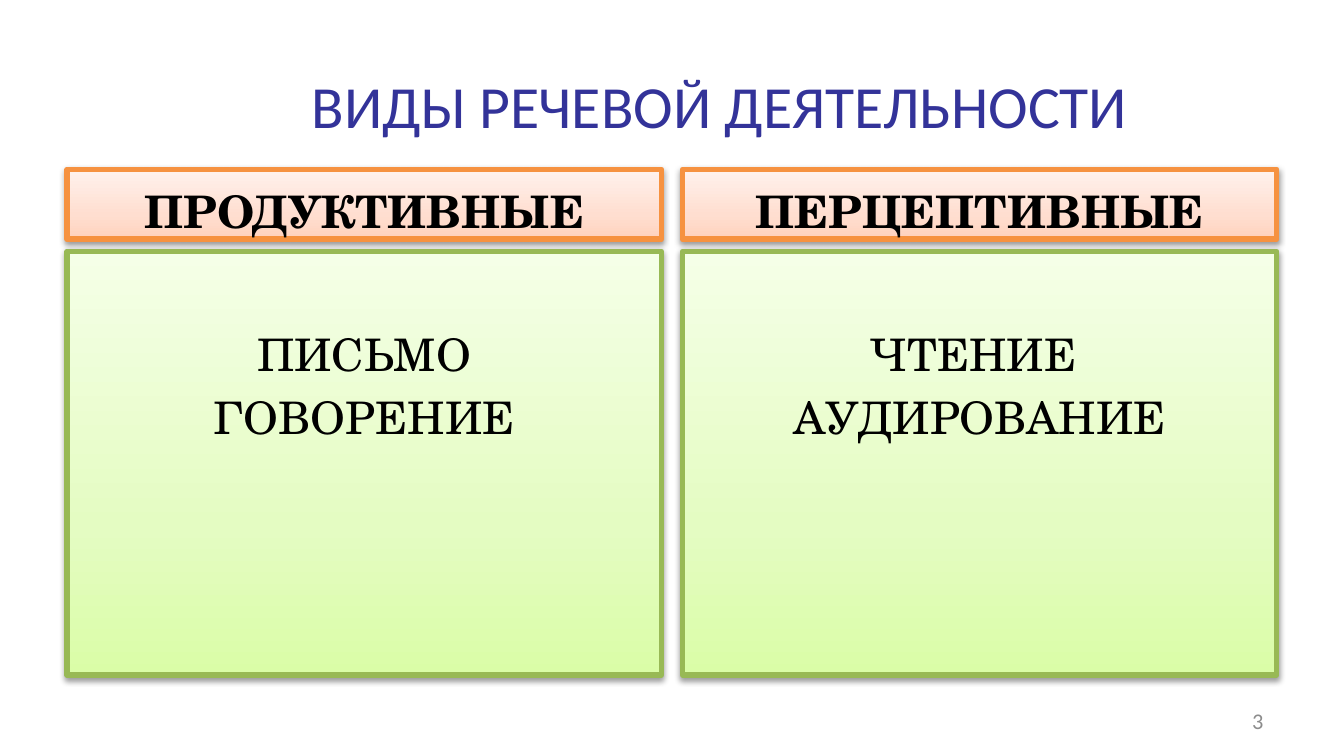
from copy import deepcopy

from lxml.etree import SubElement as Sub
from pptx import Presentation
from pptx.dml.color import RGBColor as RGB
from pptx.enum.shapes import MSO_SHAPE as Kind
from pptx.enum.text import MSO_ANCHOR as Anchor, PP_ALIGN as Align
from pptx.oxml.ns import qn
from pptx.util import Cm, Pt

HEX = {
    "title": "333399", "text": "000000", "number": "8C8C8C",
    "head": "F69240", "body": "98B955", "shade": "000000",
}
BLENDS = {
    "head": ("FFD2BD", "FFDED0", "FFF2ED"),
    "body": ("DAFDA7", "E4FCC2", "F5FFE7"),
}
STOPS = (0, 0.35, 1)
SANS, SERIF = "Calibri", "TeX Gyre Schola"

LEFT, WIDE, STEP = 1.27, 11.23, 11.63
COLUMNS = (
    ("ПРОДУКТИВНЫЕ", ("ПИСЬМО", "ГОВОРЕНИЕ")),
    ("ПЕРЦЕПТИВНЫЕ", ("ЧТЕНИЕ ", "АУДИРОВАНИЕ")),
)


class Deck:
    def __init__(self, wide, high):
        self.show = Presentation()
        self.show.slide_width, self.show.slide_height = Cm(wide), Cm(high)
        self.slide = self.show.slides.add_slide(self.show.slide_layouts[6])

    def letter(self, shape, lines, form, hue, align=Align.CENTER,
               anchor=Anchor.MIDDLE, top=0.13, bottom=0.13):
        """Set each line as a paragraph of the shape."""
        frame = shape.text_frame
        frame.word_wrap = True
        frame.vertical_anchor = anchor
        frame.margin_top, frame.margin_bottom = Cm(top), Cm(bottom)
        for i, line in enumerate(lines):
            para = frame.paragraphs[0] if i == 0 else frame.add_paragraph()
            para.alignment = align
            if i:
                para.space_before = Pt(4.8)
            run = para.add_run()
            run.text = line
            for key, value in form.items():
                setattr(run.font, key, value)
            run.font.color.rgb = RGB.from_string(HEX[hue])

    def label(self, box, line, form, hue, align=Align.CENTER):
        shape = self.slide.shapes.add_textbox(*map(Cm, box))
        self.letter(shape, [line], form, hue, align)

    def panel(self, box, kind, lines, form, **place):
        shape = self.slide.shapes.add_shape(Kind.RECTANGLE, *map(Cm, box))
        self.blend(shape, BLENDS[kind])
        shape.line.color.rgb = RGB.from_string(HEX[kind])
        shape.line.width = Pt(3)
        self.shade(shape)
        self.letter(shape, lines, form, "text", **place)

    def blend(self, shape, hues):
        """Fill with a three-stop gradient that runs from bottom to top."""
        fill = shape.fill
        fill.gradient()
        fill.gradient_angle = 90
        stops = next(shape._element.spPr.iter(qn("a:gsLst")))
        stops.append(deepcopy(stops[-1]))
        for stop, at, hue in zip(fill.gradient_stops, STOPS, hues):
            stop.position = at
            stop.color.rgb = RGB.from_string(hue)

    def shade(self, shape):
        """Drop a soft shadow straight down."""
        shape.shadow.inherit = False
        effects = shape._element.spPr.find(qn("a:effectLst"))
        outer = Sub(effects, qn("a:outerShdw"), blurRad="40000", dist="20000",
                    dir="5400000", rotWithShape="0")
        color = Sub(outer, qn("a:srgbClr"), val=HEX["shade"])
        Sub(color, qn("a:alpha"), val="38000")


def main():
    deck = Deck(25.4, 14.28)
    deck.label((2.18, 0.79, 22.86, 2.39), "ВИДЫ РЕЧЕВОЙ ДЕЯТЕЛЬНОСТИ",
               {"name": SANS, "size": Pt(32)}, "title")
    plain = {"name": SERIF, "size": Pt(24)}
    for i, (head, items) in enumerate(COLUMNS):
        x = LEFT + i * STEP
        deck.panel((x, 3.2, WIDE, 1.32), "head", [head],
                   {**plain, "bold": True}, anchor=Anchor.BOTTOM, bottom=0.04)
        deck.panel((x, 4.75, WIDE, 8), "body", items, plain,
                   anchor=Anchor.TOP, top=1.43)
    deck.label((18.21, 13.23, 5.92, 0.76), "3",
               {"name": SANS, "size": Pt(12)}, "number", Align.RIGHT)
    deck.show.save("out.pptx")


if __name__ == "__main__":
    main()
